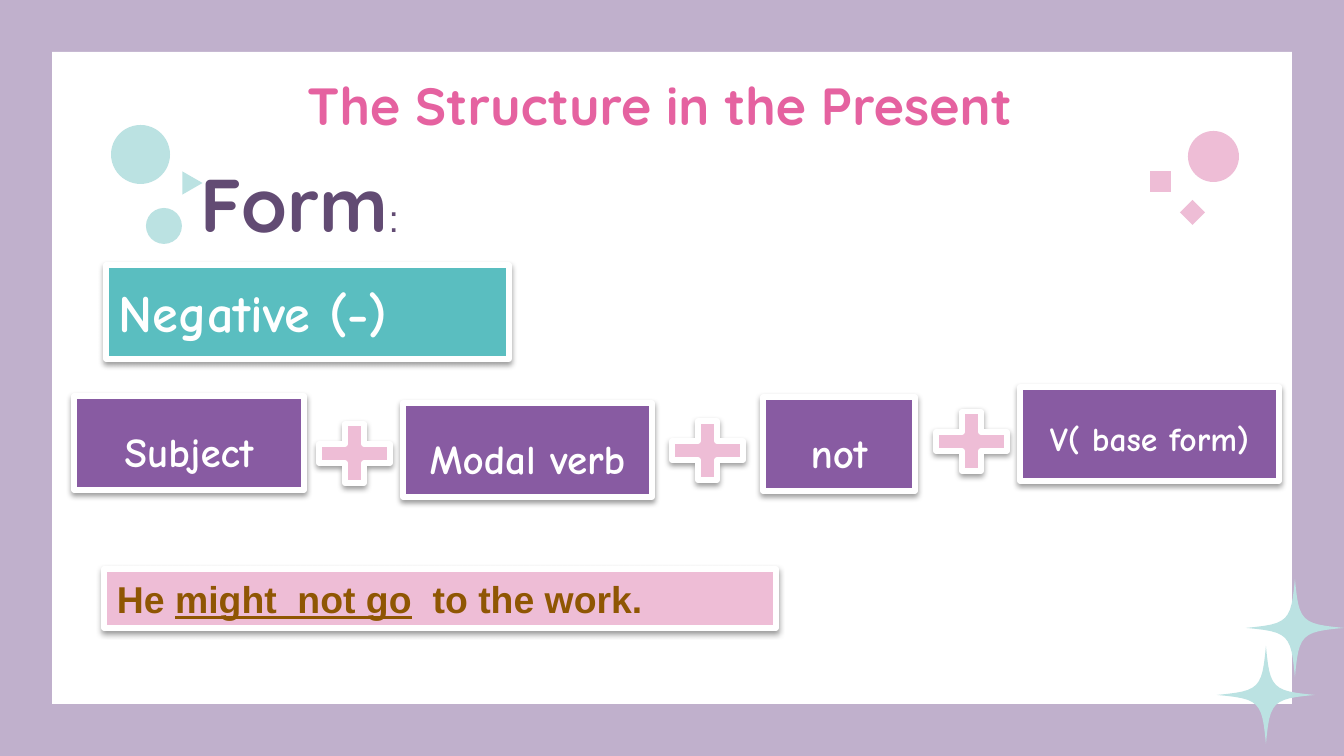
from lxml import etree
from pptx import Presentation
from pptx import util as u
from pptx.dml.color import RGBColor
from pptx.enum import shapes, text
from pptx.oxml.ns import qn

PX = 9144000 / 1344
W, H = 1344, 756
C = {"lilac": "C0B0CC", "white": "FFFFFF", "pink": "EEBDD6", "aqua": "BBE2E2",
     "purple": "885BA2", "teal": "5ABEC0", "rose": "E562A0", "plum": "624B73",
     "brown": "8F5603", "black": "000000"}
G = shapes.MSO_SHAPE
LEFT, CENTER = text.PP_ALIGN.LEFT, text.PP_ALIGN.CENTER
TOP, MIDDLE = text.MSO_ANCHOR.TOP, text.MSO_ANCHOR.MIDDLE


def px(n):
    return u.Emu(round(n * PX))


def rgb(name):
    return RGBColor.from_string(C[name])


def paint(sp, fill):
    sp.shadow.inherit = False
    sp.fill.solid()
    sp.fill.fore_color.rgb = rgb(fill)
    sp.line.fill.background()


def shape(s, kind, box, fill, rotation=0):
    sp = s.shapes.add_shape(kind, *map(px, box))
    sp.rotation = rotation
    paint(sp, fill)
    return sp


def raised(s, kind, box, fill):
    """Shape with a thick white edge and a soft shadow below."""
    sp = shape(s, kind, box, fill)
    sp.line.color.rgb = rgb("white")
    sp.line.width = u.Pt(3)
    effects = sp._element.spPr.find(qn("a:effectLst"))
    shadow = etree.SubElement(effects, qn("a:outerShdw"), blurRad=str(u.Pt(3.1)),
                              dist=str(u.Pt(1.6)), dir="5400000", rotWithShape="0")
    color = etree.SubElement(shadow, qn("a:srgbClr"), val=C["black"])
    etree.SubElement(color, qn("a:alpha"), val="38000")
    return sp


def write(sp, runs, align=LEFT, anchor=MIDDLE, top=7, bottom=7):
    """Fill a shape with one paragraph of (text, font, size, colour, format) runs."""
    tf = sp.text_frame
    frame = {"word_wrap": True, "vertical_anchor": anchor, "margin_left": px(13),
             "margin_right": px(13), "margin_top": px(top), "margin_bottom": px(bottom)}
    for key, value in frame.items():
        setattr(tf, key, value)
    p = tf.paragraphs[0]
    p.alignment = align
    for words, font, size, color, extra in runs:
        r = p.add_run()
        r.text = words
        for key, value in {"name": font, "size": u.Pt(size), "bold": True, **extra}.items():
            setattr(r.font, key, value)
        r.font.color.rgb = rgb(color)


def textbox(s, box, runs, **layout):
    write(s.shapes.add_textbox(*map(px, box)), runs, anchor=TOP, **layout)


def confetti(s, x, y, fill, parts):
    for kind, dx, dy, w, h, rotation in parts:
        shape(s, kind, (x + dx, y + dy, w, h), fill, rotation)


def star(s, x, y, size, fill):
    """Four-pointed star: one curved quarter, turned four times."""
    radius, steps = size / 2, 12
    curve = [(0, -1), (-0.08, -0.13), (-0.13, -0.08), (-1, 0)]
    points = []
    for turn in range(4):
        for i in range(steps):
            t = i / steps
            weights = ((1 - t) ** 3, 3 * t * (1 - t) ** 2, 3 * t * t * (1 - t), t ** 3)
            a, b = (sum(k * c[axis] for k, c in zip(weights, curve)) for axis in (0, 1))
            for _ in range(turn):
                a, b = b, -a
            points.append((px(x + radius * (1 + a)), px(y + radius * (1 + b))))
    fb = s.shapes.build_freeform(*points[0])
    fb.add_line_segments(points[1:], close=True)
    paint(fb.convert_to_shape(), fill)


def formula(s, x, y):
    """Row of word blocks joined by plus signs."""
    blocks = [("Subject", 0, 9, 230, 22, 23), ("Modal verb", 329, 16, 249, 22, 23),
              ("not", 689, 10, 152, 22, 23), ("V( base form)", 946, 0, 259, 18, 15)]
    for words, dx, dy, w, size, top in blocks:
        sp = raised(s, G.RECTANGLE, (x + dx, y + dy, w, 94), "purple")
        write(sp, [(words, "Comic Neue", size, "white", {})], align=CENTER, top=top)
    for dx, dy in [(232, 26), (585, 23), (849, 14)]:
        raised(s, G.MATH_PLUS, (x + dx, y + dy, 97, 81), "pink")


def example(s, box):
    sp = raised(s, G.RECTANGLE, box, "pink")
    write(sp, [("He ", "Arial", 20, "brown", {}),
               ("might  not go", "Arial", 20, "brown", {"underline": True}),
               ("  to the work.", "Arial", 20, "brown", {})])


def main():
    prs = Presentation()
    prs.slide_width, prs.slide_height = px(W), px(H)
    s = prs.slides.add_slide(prs.slide_layouts[6])

    # Frame
    s.background.fill.solid()
    s.background.fill.fore_color.rgb = rgb("lilac")
    shape(s, G.RECTANGLE, (52, 52, W - 2 * 52, H - 2 * 52), "white")

    # Title
    textbox(s, (101, 60, 1117, 84),
            [("The Structure in the Present", "Quicksand", 28, "rose", {})],
            align=CENTER, top=13)

    # Decorations
    confetti(s, 1150, 131, "pink", [(G.DIAMOND, 30, 69, 25, 25, 0),
                                    (G.RECTANGLE, 0, 40, 21, 21, 0),
                                    (G.OVAL, 38, 0, 51, 51, 0)])
    confetti(s, 111, 125, "aqua", [(G.OVAL, 0, 0, 59, 59, 0),
                                   (G.OVAL, 35, 83, 36, 36, 0),
                                   (G.ISOSCELES_TRIANGLE, 70, 48, 23, 20, 90)])
    star(s, 1246, 579, 98, "aqua")
    star(s, 1217, 646, 98, "aqua")

    # Heading and label
    textbox(s, (188, 151, 672, 103),
            [("Form", "Quicksand", 40, "plum", {}),
             (":", "Arial", 20, "plum", {"bold": False})])
    label = raised(s, G.RECTANGLE, (106, 265, 403, 94), "teal")
    write(label, [("Negative (-)", "Comic Neue", 28, "white", {})])

    # Formula and example
    formula(s, 74, 387)
    example(s, (104, 569, 672, 59))

    prs.save("out.pptx")


if __name__ == "__main__":
    main()
